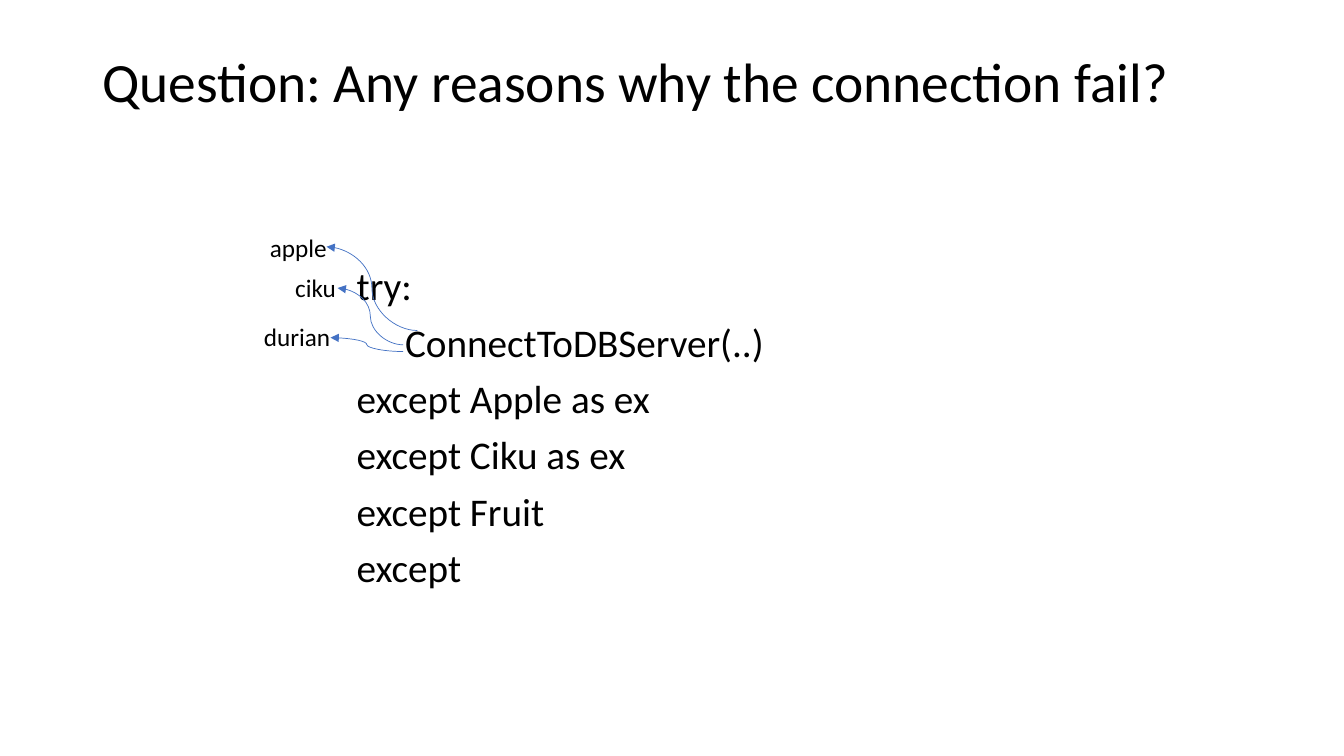
import pptx
import pptx.util
import pptx.dml.color
import pptx.enum.shapes
import pptx.enum.text
import pptx.oxml
import pptx.oxml.ns

Cm = pptx.util.Cm
Pt = pptx.util.Pt
RGB = pptx.dml.color.RGBColor.from_string
ANCHOR = pptx.enum.text.MSO_ANCHOR
COLORS = {"text": "000000", "arrow": "4472C4"}

prs = pptx.Presentation()
prs.slide_width, prs.slide_height = Cm(33.87), Cm(19.05)
slide = prs.slides.add_slide(prs.slide_layouts[6])


def add_text(box, lines, size, frame, spacing):
    sp = slide.shapes.add_textbox(*[Cm(v) for v in box])
    tf = sp.text_frame
    for name, value in frame.items():
        setattr(tf, name, value)
    for i, (text, indent) in enumerate(lines):
        p = tf.paragraphs[0] if i == 0 else tf.add_paragraph()
        for name, value in spacing.items():
            setattr(p, name, value)
        if indent:
            p._p.get_or_add_pPr().set("marL", str(Cm(indent)))
        r = p.add_run()
        r.text = text
        for name, value in {"name": "Calibri", "size": Pt(size)}.items():
            setattr(r.font, name, value)
        r.font.color.rgb = RGB(COLORS["text"])


title_frame = {"word_wrap": True, "vertical_anchor": ANCHOR.MIDDLE}
add_text((2.33, 1.01, 29.21, 2.22),
         [("Question: Any reasons why the connection fail?", 0)],
         39.6, title_frame, {"line_spacing": 0.9})

code = [
    ("try:", 0),
    ("ConnectToDBServer(..)", 1.22),
    ("except Apple as ex", 0),
    ("except Ciku as ex", 0),
    ("except Fruit", 0),
    ("except", 0),
]
code_frame = {"word_wrap": True, "margin_left": 0, "margin_top": 0}
add_text((8.99, 6.73, 22.5, 9), code, 28, code_frame,
         {"line_spacing": 0.9, "space_after": Pt(10)})

exceptions = [
    ("apple", (6.55, 5.72, 1.96, 1.02), (10.52, 8.33), (8.23, 6.22)),
    ("ciku", (7.19, 6.73, 1.55, 1.02), (10.16, 8.69), (8.51, 7.26)),
    ("durian", (6.4, 7.98, 2.21, 1.02), (10.16, 8.86), (8.33, 8.51)),
]
for name, box, start, end in exceptions:
    cxn = slide.shapes.add_connector(
        pptx.enum.shapes.MSO_CONNECTOR.CURVE, *[Cm(v) for v in start + end])
    cxn.line.width = Pt(0.5)
    cxn.line.color.rgb = RGB(COLORS["arrow"])
    ln = cxn.line._get_or_add_ln()
    tail = pptx.oxml.parse_xml(
        "<a:tailEnd %s type='triangle'/>" % pptx.oxml.ns.nsdecls("a"))
    ln.append(tail)
    cxn._element.spPr.append(pptx.oxml.parse_xml(
        "<a:effectLst %s/>" % pptx.oxml.ns.nsdecls("a")))
    add_text(box, [(name, 0)], 18, {"word_wrap": False}, {})

prs.save("out.pptx")
